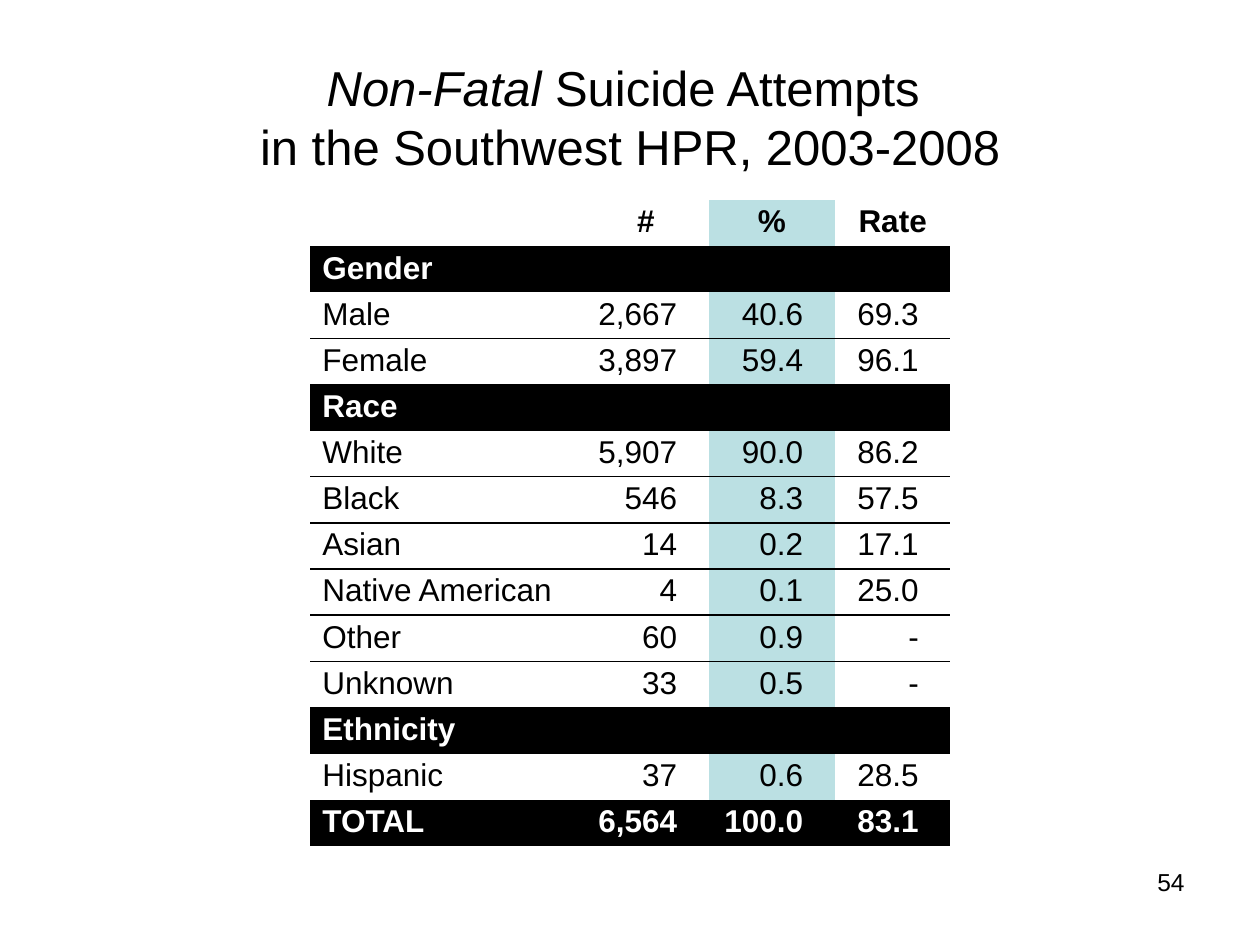
"""Build the slide of non-fatal suicide attempts by gender, race and ethnicity."""
from dataclasses import dataclass

import pptx
import pptx.dml.color
import pptx.enum.text
import pptx.oxml
import pptx.oxml.ns
import pptx.util

Cm = pptx.util.Cm
Pt = pptx.util.Pt
ALIGN = pptx.enum.text.PP_ALIGN
ANCHOR = pptx.enum.text.MSO_ANCHOR

BLACK, WHITE, TEAL = "000000", "FFFFFF", "BBE0E3"
PLAIN_STYLE = "{2D5ABB26-0587-4C30-8999-92F81FD0307C}"
COLUMN_WIDTHS = (5.5, 2.54, 2.54, 2.33)
ROW_HEIGHT = 0.93
PERCENT_COLUMN = 2


@dataclass(frozen=True)
class Row:
    kind: str
    texts: tuple[str, ...]


ROWS = (
    Row("header", ("", "#", "%", "Rate")),
    Row("section", ("Gender",)),
    Row("data", ("Male", "2,667", "40.6", "69.3")),
    Row("data", ("Female", "3,897", "59.4", "96.1")),
    Row("section", ("Race",)),
    Row("data", ("White", "5,907", "90.0", "86.2")),
    Row("data", ("Black", "546", "8.3", "57.5")),
    Row("data", ("Asian", "14", "0.2", "17.1")),
    Row("data", ("Native American", "4", "0.1", "25.0")),
    Row("data", ("Other", "60", "0.9", "-")),
    Row("data", ("Unknown", "33", "0.5", "-")),
    Row("section", ("Ethnicity",)),
    Row("data", ("Hispanic", "37", "0.6", "28.5")),
    Row("total", ("TOTAL", "6,564", "100.0", "83.1")),
)


def rgb(code: str) -> pptx.dml.color.RGBColor:
    """Turn a hex string into a colour."""
    return pptx.dml.color.RGBColor.from_string(code)


def apply(target, values: dict) -> None:
    """Set each named attribute on the target."""
    for name, value in values.items():
        setattr(target, name, value)


def add_run(paragraph, text: str, size: float, color: str = BLACK, **styles) -> None:
    """Append a formatted run to a paragraph."""
    run = paragraph.add_run()
    run.text = text
    apply(run.font, {"name": "Arial", "size": Pt(size), **styles})
    run.font.color.rgb = rgb(color)


def add_text_box(slide, left: float, top: float, width: float, height: float,
                 align, anchor):
    """Add a wrapping text box and return its first paragraph."""
    frame = slide.shapes.add_textbox(Cm(left), Cm(top), Cm(width), Cm(height)).text_frame
    apply(frame, {"word_wrap": True, "vertical_anchor": anchor})
    paragraph = frame.paragraphs[0]
    paragraph.alignment = align
    return paragraph


def add_rule(cell, edge: str) -> None:
    """Draw a thin black line on one edge of a cell."""
    line = pptx.oxml.parse_xml(
        f'<a:{edge} {pptx.oxml.ns.nsdecls("a")} w="{Pt(1)}">'
        f'<a:solidFill><a:srgbClr val="{BLACK}"/></a:solidFill></a:{edge}>')
    cell._tc.get_or_add_tcPr().insert(0, line)


def fill_cell(cell, row: Row, column: int) -> None:
    """Write and colour one cell according to its row kind and column."""
    dark = row.kind in ("section", "total")
    fill = BLACK if dark else TEAL if column == PERCENT_COLUMN else None
    if fill:
        cell.fill.solid()
        cell.fill.fore_color.rgb = rgb(fill)
    else:
        cell.fill.background()
    text = row.texts[column] if column < len(row.texts) else ""
    numeric = column > 0 and row.kind != "header"
    apply(cell, {
        "vertical_anchor": ANCHOR.BOTTOM,
        "margin_left": Cm(0.25),
        "margin_right": Cm(0.64 if numeric else 0.25),
        "margin_top": Cm(0.07 if text else 0),
        "margin_bottom": Cm(0.13 if text else 0),
    })
    if not text:
        return
    paragraph = cell.text_frame.paragraphs[0]
    align = ALIGN.RIGHT if numeric else ALIGN.CENTER if column else ALIGN.LEFT
    apply(paragraph, {"alignment": align, "line_spacing": 0.95})
    add_run(paragraph, text, 18, WHITE if dark else BLACK, bold=row.kind != "data")


def add_attempts_table(slide) -> None:
    """Add the table of attempts with its section bands and rules."""
    frame = slide.shapes.add_table(
        len(ROWS), len(COLUMN_WIDTHS), Cm(6.25), Cm(4.03),
        Cm(sum(COLUMN_WIDTHS)), Cm(ROW_HEIGHT * len(ROWS)))
    attempts = frame.table
    apply(attempts, {"first_row": False, "horz_banding": False})
    attempts._tbl.tblPr.find(pptx.oxml.ns.qn("a:tableStyleId")).text = PLAIN_STYLE
    for column, width in zip(attempts.columns, COLUMN_WIDTHS):
        column.width = Cm(width)
    for index, row in enumerate(ROWS):
        attempts.rows[index].height = Cm(ROW_HEIGHT)
        for column in range(len(COLUMN_WIDTHS)):
            fill_cell(attempts.cell(index, column), row, column)
        if row.kind == "section":
            attempts.cell(index, 0).merge(attempts.cell(index, len(COLUMN_WIDTHS) - 1))
    for index, (upper, lower) in enumerate(zip(ROWS, ROWS[1:])):
        if upper.kind == lower.kind == "data":
            for column in range(len(COLUMN_WIDTHS)):
                add_rule(attempts.cell(index, column), "lnB")
                add_rule(attempts.cell(index + 1, column), "lnT")


def main() -> None:
    """Build and save the slide."""
    deck = pptx.Presentation()
    apply(deck, {"slide_width": Cm(25.4), "slide_height": Cm(19.05)})
    slide = deck.slides.add_slide(deck.slide_layouts[6])

    page = add_text_box(slide, 18.2, 17.35, 5.93, 1.32, ALIGN.RIGHT, ANCHOR.TOP)
    add_run(page, "54", 14)

    title = add_text_box(slide, 1.27, 0.76, 22.86, 3.18, ALIGN.CENTER, ANCHOR.MIDDLE)
    add_run(title, "Non-Fatal ", 28, italic=True)
    add_run(title, "Suicide Attempts ", 28)
    title.add_line_break()
    add_run(title, "in the Southwest HPR, 2003-2008", 28)

    add_attempts_table(slide)
    deck.save("out.pptx")


if __name__ == "__main__":
    main()
